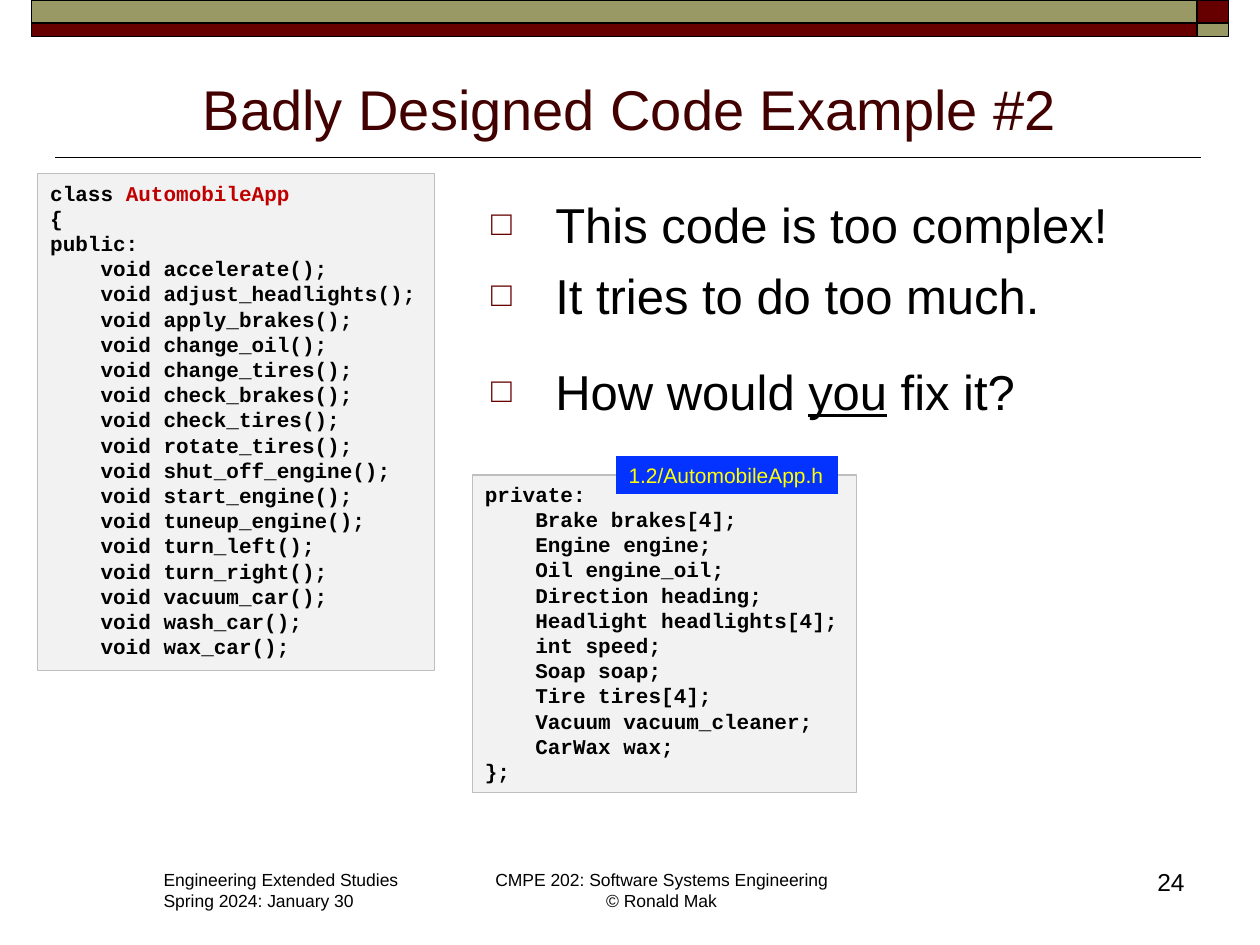
from lxml import etree
from pptx import Presentation
from pptx.dml.color import RGBColor
from pptx.enum import shapes, text
from pptx.oxml import ns
from pptx.util import Inches, Pt

COLORS = {"maroon": "660000", "olive": "999966", "title": "420000",
          "black": "000000", "red": "C00000", "panel": "F2F2F2",
          "border": "BFBFBF", "blue": "0432FF", "yellow": "FFFF00"}
BODY = {"name": "Arial", "size": Pt(28)}
CODE = {"name": "Courier New", "size": Pt(12), "bold": True}
FOOTER = {"name": "Arial", "size": Pt(10)}

PUBLIC_CODE = """{
public:
    void accelerate();
    void adjust_headlights();
    void apply_brakes();
    void change_oil();
    void change_tires();
    void check_brakes();
    void check_tires();
    void rotate_tires();
    void shut_off_engine();
    void start_engine();
    void tuneup_engine();
    void turn_left();
    void turn_right();
    void vacuum_car();
    void wash_car();
    void wax_car();"""
PRIVATE_CODE = """private:
    Brake brakes[4];
    Engine engine;
    Oil engine_oil;
    Direction heading;
    Headlight headlights[4];
    int speed;
    Soap soap;
    Tire tires[4];
    Vacuum vacuum_cleaner;
    CarWax wax;
};"""


def rgb(name):
    return RGBColor.from_string(COLORS[name])


def add_run(paragraph, words, font, color="black", **extra):
    run = paragraph.add_run()
    run.text = words
    for key, value in {**font, **extra}.items():
        setattr(run.font, key, value)
    run.font.color.rgb = rgb(color)


def add_lines(shape, lines, font, color="black", align=text.PP_ALIGN.LEFT, wrap=False):
    """Fill a shape with one paragraph per line; a line is a list of (words, color) or a string."""
    frame = shape.text_frame
    frame.word_wrap = wrap
    frame.vertical_anchor = text.MSO_ANCHOR.TOP
    for index, line in enumerate(lines):
        paragraph = frame.add_paragraph() if index else frame.paragraphs[0]
        paragraph.alignment = align
        for words, tint in [(line, color)] if isinstance(line, str) else line:
            add_run(paragraph, words, font, tint)


def add_rectangle(slide, box, fill, border=None, weight=0.75):
    shape = slide.shapes.add_shape(shapes.MSO_SHAPE.RECTANGLE, *map(Inches, box))
    shape.shadow.inherit = False
    shape.fill.solid()
    shape.fill.fore_color.rgb = rgb(fill)
    if border:
        shape.line.color.rgb = rgb(border)
        shape.line.width = Pt(weight)
    else:
        shape.line.fill.background()
    return shape


def add_textbox(slide, box):
    return slide.shapes.add_textbox(*map(Inches, box))


def add_banner(slide, box):
    left, top, width, height = box
    corner, upper = 0.25, 0.18
    columns = [(left, width - corner), (left + width - corner, corner)]
    rows = [(top, upper), (top + upper, height - upper)]
    for i, (x, w) in enumerate(columns):
        for j, (y, h) in enumerate(rows):
            add_rectangle(slide, (x, y, w, h), ("olive", "maroon")[(i + j) % 2], "black", 1)


def add_title(slide, box):
    shape = add_textbox(slide, box)
    add_lines(shape, ["Badly Designed Code Example #2"],
              {"name": "Arial", "size": Pt(32)}, "title", text.PP_ALIGN.CENTER, True)
    shape.text_frame.vertical_anchor = text.MSO_ANCHOR.BOTTOM
    y = Inches(box[1] + 0.8)
    rule = slide.shapes.add_connector(shapes.MSO_CONNECTOR.STRAIGHT,
                                      Inches(0.44), y, Inches(9.53), y)
    rule.line.color.rgb = rgb("black")
    rule.line.width = Pt(1)
    etree.SubElement(rule._element.spPr, ns.qn("a:effectLst"))


def set_bullet(paragraph):
    properties = paragraph._p.get_or_add_pPr()
    indent = Inches(0.51)
    properties.set("marL", str(indent))
    properties.set("indent", str(-indent))
    color = etree.SubElement(properties, ns.qn("a:buClr"))
    etree.SubElement(color, ns.qn("a:srgbClr"), val=COLORS["maroon"])
    etree.SubElement(properties, ns.qn("a:buSzPct"), val="70000")
    etree.SubElement(properties, ns.qn("a:buFont"), typeface="Arial")
    etree.SubElement(properties, ns.qn("a:buChar"), char="□")


def add_points(slide, box):
    frame = add_textbox(slide, box).text_frame
    frame.word_wrap = True
    frame.margin_top = Inches(0.09)
    points = [(0, ["This code is too complex!"]),
              (7, ["It tries to do too much."]),
              (21.5, ["How would ", "you", " fix it?"])]
    for index, (space, pieces) in enumerate(points):
        paragraph = frame.add_paragraph() if index else frame.paragraphs[0]
        paragraph.space_before = Pt(space)
        set_bullet(paragraph)
        for piece in pieces:
            add_run(paragraph, piece, BODY, underline=piece == "you")


def add_code(slide, box, lines):
    add_lines(add_rectangle(slide, box, "panel", "border"), lines, CODE)


def add_file_label(slide, box):
    add_lines(add_rectangle(slide, box, "blue"), ["1.2/AutomobileApp.h"],
              {"name": "Arial", "size": Pt(12)}, "yellow")


def add_footer(slide, box):
    left, top, width, height = box
    add_lines(add_textbox(slide, (left, top, 2.07, height)),
              ["Engineering Extended Studies", "Spring 2024: January 30"], FOOTER)
    add_lines(add_textbox(slide, (left + 2.6, top, 2.9, height)),
              ["CMPE 202: Software Systems Engineering", "© Ronald Mak"],
              FOOTER, align=text.PP_ALIGN.CENTER)
    add_lines(add_textbox(slide, (left + width - 0.8, top - 0.02, 0.8, 0.5)), ["24"],
              {"name": "Arial", "size": Pt(14)}, align=text.PP_ALIGN.RIGHT, wrap=True)


def main():
    presentation = Presentation()
    presentation.slide_width, presentation.slide_height = Inches(10), Inches(7.5)
    slide = presentation.slides.add_slide(presentation.slide_layouts[6])
    add_banner(slide, (0.25, 0, 9.5, 0.29))
    add_title(slide, (0.5, 0.45, 9, 0.72))
    add_points(slide, (3.8, 1.45, 5.7, 2.03))
    class_line = [("class ", "black"), ("AutomobileApp", "red")]
    add_code(slide, (0.3, 1.38, 3.15, 3.94), [class_line, *PUBLIC_CODE.split("\n")])
    add_code(slide, (3.75, 3.77, 3.05, 2.52), PRIVATE_CODE.split("\n"))
    add_file_label(slide, (4.89, 3.62, 1.76, 0.3))
    add_footer(slide, (1.2, 6.85, 8.3, 0.44))
    presentation.save("out.pptx")


if __name__ == "__main__":
    main()
